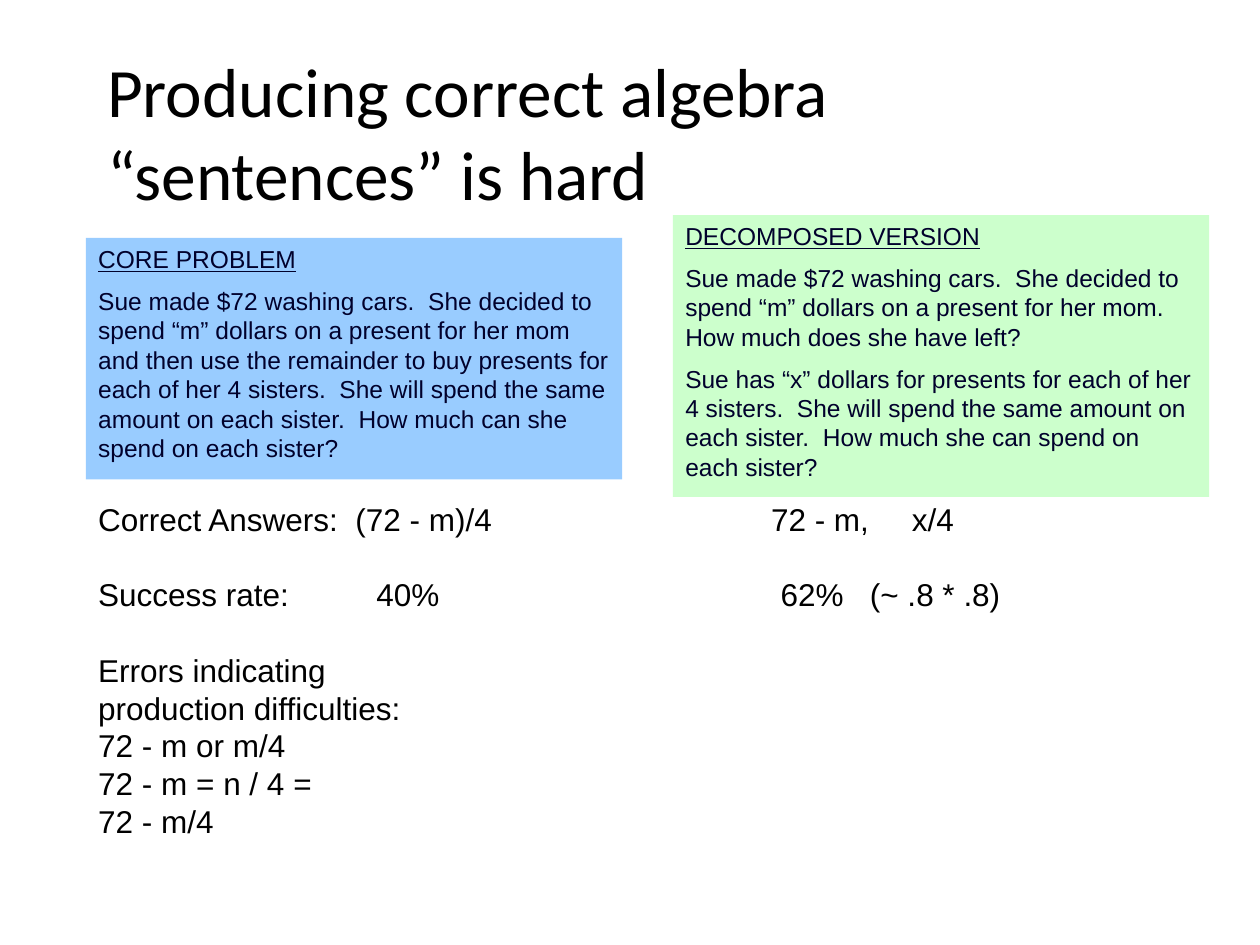
from dataclasses import dataclass

from lxml.etree import SubElement
from pptx import Presentation
from pptx.dml.color import RGBColor as RGB
from pptx.enum.shapes import MSO_SHAPE as Shape
from pptx.enum.text import MSO_ANCHOR as Anchor, PP_ALIGN as Align
from pptx.oxml.ns import qn
from pptx.util import Pt


@dataclass(frozen=True)
class Theme:
    head: str = "Calibri"
    body: str = "Arial"
    black: RGB = RGB(0, 0, 0)
    navy: RGB = RGB(0x01, 0x01, 0x2C)
    blue: RGB = RGB(0x99, 0xCC, 0xFF)
    green: RGB = RGB(0xCC, 0xFF, 0xCC)
    big: float = 39.6
    mid: float = 18
    small: float = 14


THEME = Theme()
GAP = 21.6

CORE = [
    "CORE PROBLEM",
    "Sue made $72 washing cars.  She decided to spend “m” dollars on a "
    "present for her mom and then use the remainder to buy presents for each "
    "of her 4 sisters.  She will spend the same amount on each sister.  How "
    "much can she spend on each sister?",
]
PARTS = [
    "DECOMPOSED VERSION",
    "Sue made $72 washing cars.  She decided to spend “m” dollars on a "
    "present for her mom.  How much does she have left?",
    "Sue has “x” dollars for presents for each of her 4 sisters.  She will "
    "spend the same amount on each sister.  How much she can spend on each "
    "sister?",
]
# Each row: text, space before, tab stops
ROWS = [
    ("Correct Answers:\t(72 - m)/4\t72 - m,\tx/4", 0, (147, 384.5, 465)),
    ("Success rate:\t40%\t62%\t(~ .8 * .8)", GAP, (159, 390, 441)),
    ("Errors indicating", GAP, ()),
    ("production difficulties:", 0, ()),
    ("72 - m or m/4", 0, ()),
    ("72 - m = n / 4 =", 0, ()),
    ("72 - m/4", 0, ()),
]


def style(para, name, size, color):
    para.alignment = Align.LEFT
    font = para.font
    font.name, font.size = name, Pt(size)
    font.color.rgb = color


def set_tabs(para, stops):
    tabs = SubElement(para._p.get_or_add_pPr(), qn("a:tabLst"))
    for stop in stops:
        SubElement(tabs, qn("a:tab"), pos=str(Pt(stop)), algn="l")


def add_title(slide, box, text):
    title = slide.shapes.title
    title.left, title.top, title.width, title.height = map(Pt, box)
    frame = title.text_frame
    frame.text = text
    frame.vertical_anchor = Anchor.MIDDLE
    style(frame.paragraphs[0], THEME.head, THEME.big, THEME.black)


def add_card(slide, box, fill, texts):
    """Filled problem box with an underlined heading."""
    card = slide.shapes.add_shape(Shape.RECTANGLE, *map(Pt, box))
    card.shadow.inherit = False
    card.fill.solid()
    card.fill.fore_color.rgb = fill
    card.line.fill.background()
    frame = card.text_frame
    frame.word_wrap = True
    frame.vertical_anchor = Anchor.TOP
    frame.text = "\n".join(texts)
    for i, para in enumerate(frame.paragraphs):
        para.space_before = Pt(THEME.small / 2 if i else 0)
        style(para, THEME.body, THEME.small, THEME.navy)
    frame.paragraphs[0].runs[0].font.underline = True


def add_results(slide, box, rows):
    frame = slide.shapes.add_textbox(*map(Pt, box)).text_frame
    frame.word_wrap = True
    frame.text = "\n".join(text for text, _, _ in rows)
    for para, (_, gap, stops) in zip(frame.paragraphs, rows):
        para.space_before = Pt(gap)
        if stops:
            set_tabs(para, stops)
        style(para, THEME.body, THEME.mid, THEME.black)


def main():
    deck = Presentation()
    deck.slide_width, deck.slide_height = Pt(720), Pt(540)
    slide = deck.slides.add_slide(deck.slide_layouts[5])
    add_title(slide, (54, 30, 612, 90),
              "Producing correct algebra “sentences” is hard")
    add_card(slide, (49, 136, 306.5, 138), THEME.blue, CORE)
    add_results(slide, (49, 282, 619, 203), ROWS)
    add_card(slide, (384.5, 123, 306.5, 161), THEME.green, PARTS)
    deck.save("out.pptx")


if __name__ == "__main__":
    main()
